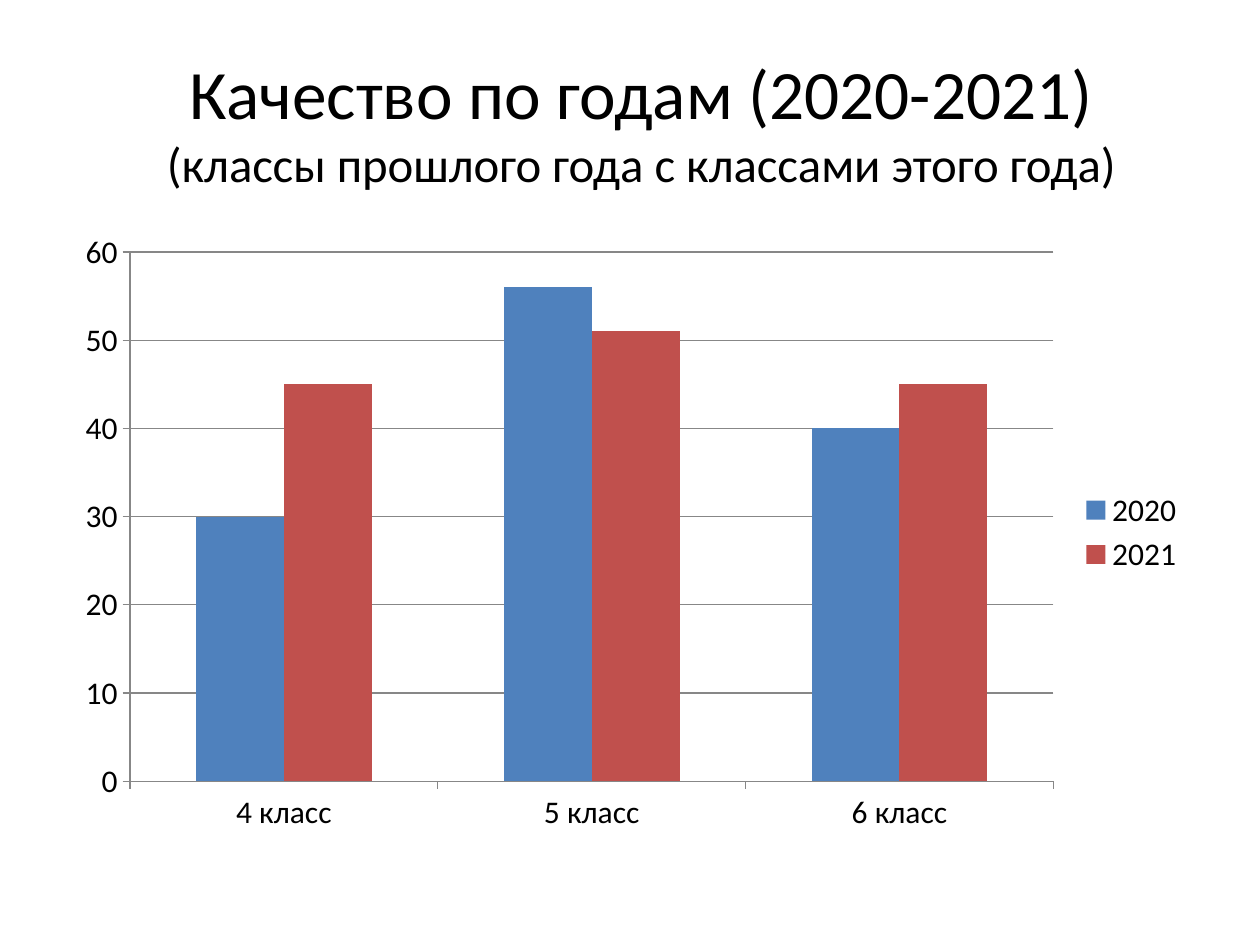
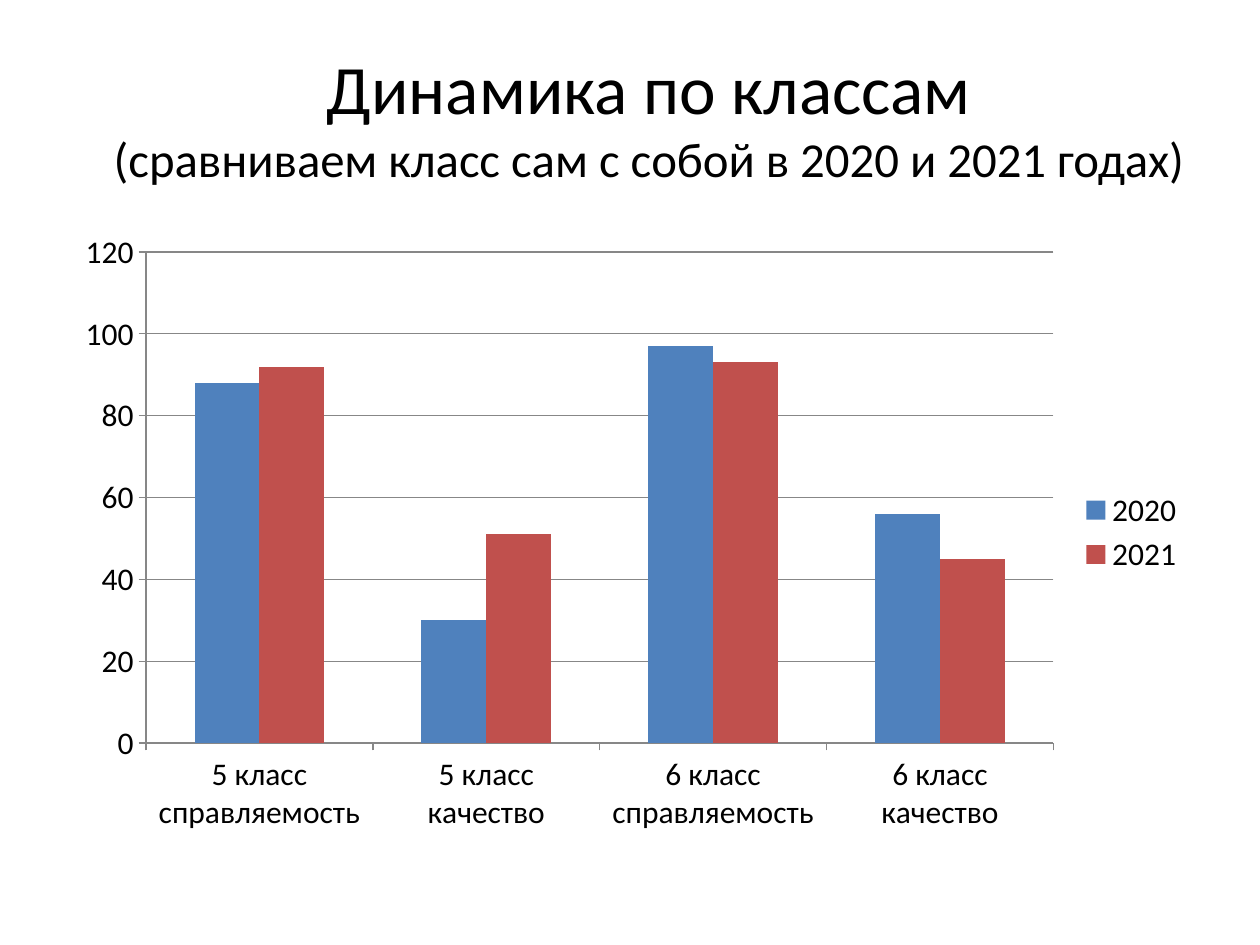
"""Build two slides comparing class results for 2020 and 2021."""
from pptx import Presentation
from pptx import util as u
from pptx.chart import data as chart_data
from pptx.dml import color
from pptx.enum import chart as chart_enum, text

FONT = "Calibri"
BLACK, GREY = "000000", "878787"
SERIES_COLORS = {"2020": "4F81BD", "2021": "C0504D"}
TITLE_SIZES = (39.6, 27.9)
CHART_BOX = (36, 126, 648, 356.4)

SLIDES = [
    {
        "title": ("Качество по годам (2020-2021)",
                  "(классы прошлого года с классами этого года)"),
        "title_box": (42.5, 20.9, 648, 96.5),
        "categories": ["4 класс", "5 класс", "6 класс"],
        "values": {"2020": (30, 56, 40), "2021": (45, 51, 45)},
        "top_value": 60,
        "step": 10,
    },
    {
        "title": ("Динамика по классам",
                  "(сравниваем класс сам с собой в 2020 и 2021 годах)"),
        "title_box": (36, 21.6, 669.6, 90),
        "categories": [f"{grade} класс\n{measure}" for grade in (5, 6)
                       for measure in ("справляемость", "качество")],
        "values": {"2020": (88, 30, 97, 56), "2021": (92, 51, 93, 45)},
        "top_value": 120,
        "step": 20,
    },
]


def rgb(value):
    return color.RGBColor.from_string(value)


def style_font(font, size):
    font.name = FONT
    font.size = u.Pt(size)
    font.color.rgb = rgb(BLACK)


deck = Presentation()
deck.slide_width, deck.slide_height = u.Pt(720), u.Pt(540)

for content in SLIDES:
    page = deck.slides.add_slide(deck.slide_layouts[5])

    title = page.shapes.title
    title.left, title.top, title.width, title.height = map(u.Pt, content["title_box"])
    frame = title.text_frame
    frame.auto_size = text.MSO_AUTO_SIZE.NONE
    frame.vertical_anchor = text.MSO_ANCHOR.MIDDLE
    para = frame.paragraphs[0]
    para.text = "\v".join(content["title"])
    para.alignment = text.PP_ALIGN.CENTER
    for span, size in zip(para.runs, TITLE_SIZES):
        style_font(span.font, size)

    results = chart_data.CategoryChartData()
    results.categories = content["categories"]
    for year, values in content["values"].items():
        results.add_series(year, values)
    chart = page.shapes.add_chart(
        chart_enum.XL_CHART_TYPE.COLUMN_CLUSTERED, *map(u.Pt, CHART_BOX), results).chart
    style_font(chart.font, 18)
    chart.has_title = False
    chart.has_legend = True
    chart.legend.position = chart_enum.XL_LEGEND_POSITION.RIGHT
    chart.legend.include_in_layout = False

    plot = chart.plots[0]
    plot.gap_width, plot.overlap = 150, 0
    plot.vary_by_categories = False
    for series in plot.series:
        series.format.fill.solid()
        series.format.fill.fore_color.rgb = rgb(SERIES_COLORS[series.name])

    value_axis = chart.value_axis
    value_axis.minimum_scale = 0
    value_axis.maximum_scale = content["top_value"]
    value_axis.major_unit = content["step"]
    value_axis.has_major_gridlines = True
    for axis in (chart.category_axis, value_axis):
        axis.major_tick_mark = chart_enum.XL_TICK_MARK.OUTSIDE
    for ruled in (chart.category_axis, value_axis, value_axis.major_gridlines):
        ruled.format.line.color.rgb = rgb(GREY)
        ruled.format.line.width = u.Pt(0.75)

deck.save("out.pptx")
